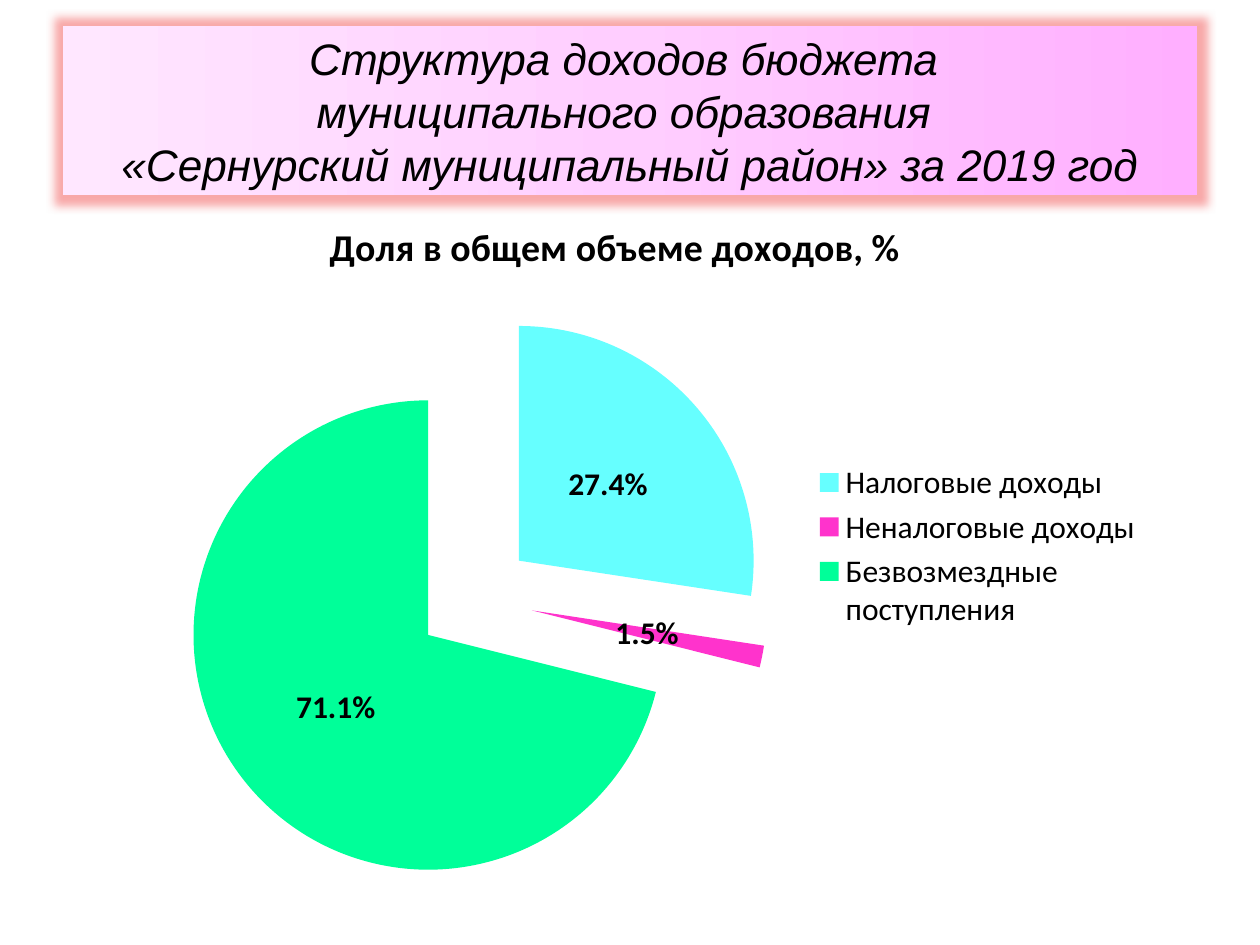
import pptx
import pptx.util
import pptx.chart.data
import pptx.dml.color
import pptx.enum.chart
import pptx.enum.text
import pptx.oxml
import pptx.oxml.ns

Pt = pptx.util.Pt

# Content
HEAD = [
    "Структура доходов бюджета ",
    "муниципального образования ",
    "«Сернурский муниципальный район» за 2019 год",
]
NAME = "Доля в общем объеме доходов, %"
PARTS = [
    ("Налоговые доходы", 0.274, "66FFFF"),
    ("Неналоговые доходы", 0.015, "FF33CC"),
    ("Безвозмездные поступления", 0.711, "00FF99"),
]
STOPS = [(0, "FFAFFF"), (50, "FFCEFF"), (100, "FFE7FF")]
PLOT = {"x": 0.06, "y": 0.16, "w": 0.62, "h": 0.83}


def paint(obj, code):
    """Give a fill or a font a solid colour."""
    if hasattr(obj, "solid"):
        obj.solid()
        obj.fore_color.rgb = pptx.dml.color.RGBColor.from_string(code)
    else:
        obj.color.rgb = pptx.dml.color.RGBColor.from_string(code)


def style(font, face, size, bold=False, italic=False):
    font.name, font.size = face, Pt(size)
    font.bold, font.italic = bold, italic
    paint(font, "000000")


def parse(tag, body, space):
    """Make an XML element from its tag and inner text."""
    names = pptx.oxml.ns.nsdecls(space)
    return pptx.oxml.parse_xml(f"<{space}:{tag} {names}>{body}</{space}:{tag}>")


deck = pptx.Presentation()
deck.slide_width, deck.slide_height = Pt(720), Pt(540)
slide = deck.slides.add_slide(deck.slide_layouts[5])

# Title with gradient and glow
title = slide.shapes.title
title.left, title.top, title.width, title.height = Pt(36), Pt(15), Pt(648), Pt(96.5)
stops = "".join(
    f'<a:gs pos="{pos * 1000}"><a:srgbClr val="{code}"/></a:gs>' for pos, code in STOPS
)
props = title.element.spPr
props.append(parse("prstGeom", "<a:avLst/>", "a"))
props[-1].set("prst", "rect")
props.append(parse("gradFill", f'<a:gsLst>{stops}</a:gsLst><a:lin ang="10800000"/>', "a"))
props.append(parse(
    "effectLst",
    '<a:glow rad="139700"><a:srgbClr val="F04040"><a:alpha val="45000"/></a:srgbClr></a:glow>',
    "a",
))
frame = title.text_frame
frame.text = "\n".join(HEAD)
frame.word_wrap = False
frame.auto_size = pptx.enum.text.MSO_AUTO_SIZE.NONE
frame.vertical_anchor = pptx.enum.text.MSO_ANCHOR.MIDDLE
for para in frame.paragraphs:
    para.alignment = pptx.enum.text.PP_ALIGN.CENTER
    style(para.font, "Arial", 25.2, italic=True)

# Pie chart
data = pptx.chart.data.CategoryChartData(number_format="0.0%")
data.categories = [part[0] for part in PARTS]
data.add_series(NAME, [part[1] for part in PARTS])
chart = slide.shapes.add_chart(
    pptx.enum.chart.XL_CHART_TYPE.PIE, Pt(42.5), Pt(110), Pt(618), Pt(404), data
).chart
style(chart.font, "Calibri", 18)
chart.has_title = True
chart.chart_title.text_frame.text = NAME
style(chart.chart_title.text_frame.paragraphs[0].font, "Calibri", 21.6, bold=True)
chart.has_legend = True
chart.legend.position = pptx.enum.chart.XL_LEGEND_POSITION.RIGHT
chart.legend.include_in_layout = False
style(chart.legend.font, "Calibri", 18)

# Slices and labels
plot = chart.plots[0]
plot.vary_by_categories = True
series = plot.series[0]
for num, (_, _, code) in enumerate(PARTS):
    paint(series.points[num].format.fill, code)
labels = series.data_labels
labels.show_value = True
labels.show_percentage = False
labels.number_format = "0.0%"
labels.number_format_is_linked = False
labels.position = pptx.enum.chart.XL_LABEL_POSITION.CENTER
style(labels.font, "Calibri", 18, bold=True)

# Pulled-out slices
gap = parse("explosion", "", "c")
gap.set("val", "25")
series.points[0].format.fill
first = series._element.find(pptx.oxml.ns.qn("c:dPt"))
first.addprevious(gap)

# Plot area placement
body = '<c:layoutTarget val="inner"/>'
body += "".join(f'<c:{key}Mode val="edge"/>' for key in "xy")
body += "".join(f'<c:{key} val="{size}"/>' for key, size in PLOT.items())
area = chart._chartSpace.chart.plotArea
for old in area.findall(pptx.oxml.ns.qn("c:layout")):
    area.remove(old)
area.insert(0, parse("layout", f"<c:manualLayout>{body}</c:manualLayout>", "c"))

deck.save("out.pptx")
